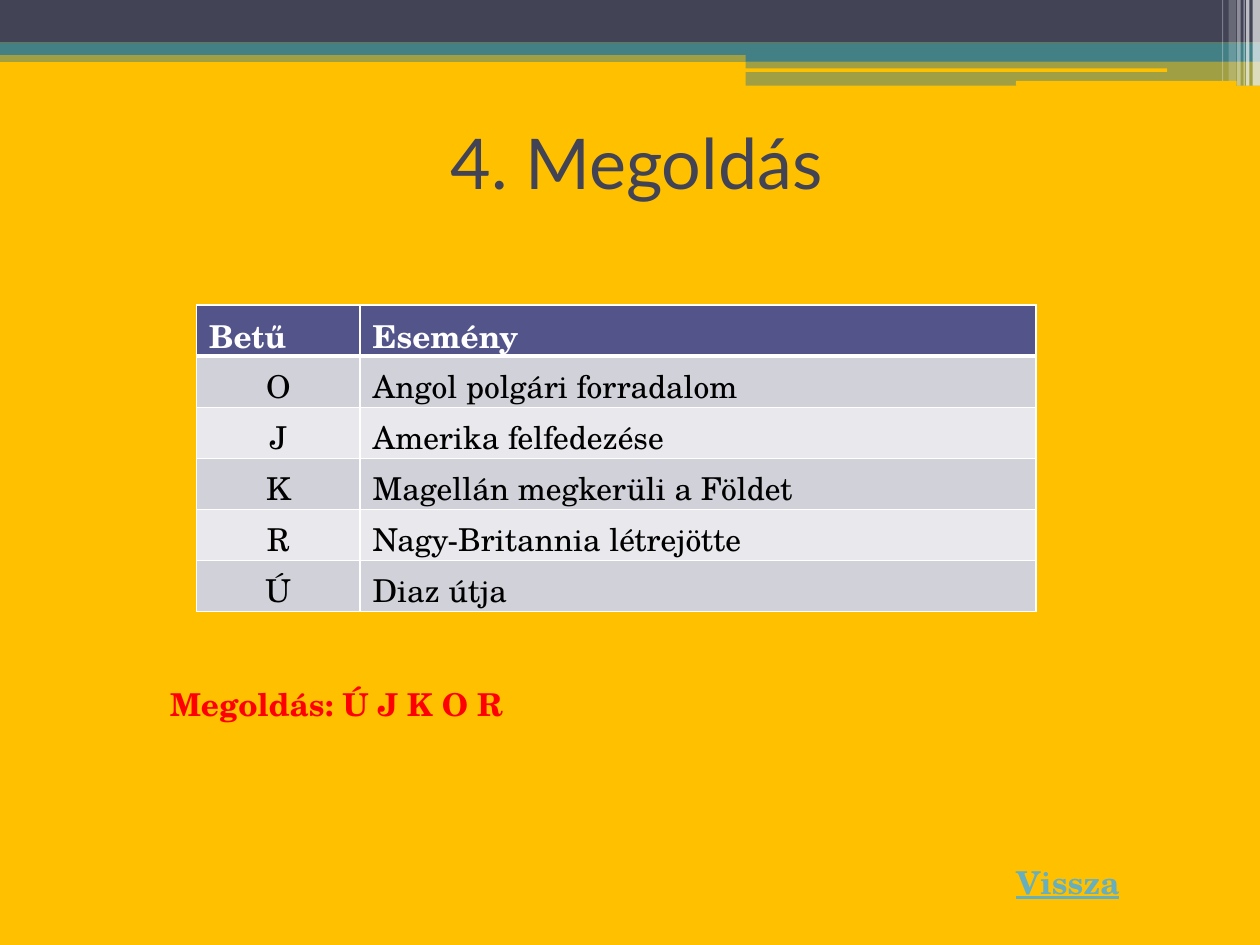
from lxml.etree import SubElement as Sub
from pptx import Presentation
from pptx.dml.color import RGBColor
from pptx.enum.shapes import MSO_SHAPE as Kind
from pptx.enum.text import MSO_ANCHOR as Anchor, PP_ALIGN as Align
from pptx.oxml.ns import qn
from pptx.util import Cm, Pt

GOLD = RGBColor(0xFF, 0xC0, 0x00)
SLATE = RGBColor(0x42, 0x44, 0x56)
TEAL = RGBColor(0x43, 0x80, 0x86)
WHITE = RGBColor(0xFF, 0xFF, 0xFF)
BLACK = RGBColor(0x00, 0x00, 0x00)
RED = RGBColor(0xFF, 0x00, 0x00)
AQUA = RGBColor(0x67, 0xAF, 0xBD)
INDIGO = RGBColor(0x53, 0x54, 0x8A)
GREY = RGBColor(0xD1, 0xD1, 0xDA)
PALE = RGBColor(0xE9, 0xE9, 0xED)


def write(frame, text, size=18, font="TeX Gyre Schola", color=BLACK,
          bold=False, line=False, align=Align.LEFT):
    par = frame.paragraphs[0]
    par.alignment = align
    run = par.add_run()
    run.text = text
    run.font.size = Pt(size)
    run.font.name = font
    run.font.color.rgb = color
    run.font.bold = bold
    run.font.underline = line


def edge(cell, side, width):
    line = Sub(cell._tc.get_or_add_tcPr(), qn("a:" + side), w=str(Pt(width)))
    fill = Sub(line, qn("a:solidFill"))
    Sub(fill, qn("a:srgbClr"), val=str(WHITE))


deck = Presentation()
deck.slide_width = Cm(25.4)
deck.slide_height = Cm(19.05)
slide = deck.slides.add_slide(deck.slide_layouts[6])
slide.background.fill.solid()
slide.background.fill.fore_color.rgb = GOLD

bars = [
    (0, 1.02, 25.4, 0.23, TEAL, 50),
    (0, 0, 25.4, 0.86, SLATE, 100),
    (0, 0.86, 25.4, 0.25, TEAL, 100),
    (15.03, 0.99, 10.37, 0.25, TEAL, 100),
    (15.03, 1.23, 10.37, 0.5, TEAL, 50),
    (15.02, 1.38, 8.51, 0.07, GOLD, 100),
    (20.48, 1.63, 4.45, 0.1, GOLD, 100),
    (25.25, 0, 0.15, 1.73, WHITE, 65),
    (25.12, 0, 0.07, 1.73, WHITE, 65),
    (25.07, 0, 0.02, 1.73, WHITE, 60),
    (24.94, 0, 0.07, 1.73, WHITE, 40),
    (24.77, 0, 0.15, 1.63, WHITE, 20),
    (24.64, 0, 0.02, 1.63, WHITE, 30),
]
for left, top, width, height, color, alpha in bars:
    kind = Kind.ROUNDED_RECTANGLE if color == GOLD else Kind.RECTANGLE
    bar = slide.shapes.add_shape(kind, Cm(left), Cm(top), Cm(width), Cm(height))
    bar.shadow.inherit = False
    bar.line.fill.background()
    bar.fill.solid()
    bar.fill.fore_color.rgb = color
    if alpha < 100:
        tint = bar.fill._xPr.find(".//" + qn("a:srgbClr"))
        Sub(tint, qn("a:alpha"), val=str(alpha * 1000))

title = slide.shapes.add_textbox(Cm(1.4), Cm(1.78), Cm(22.86), Cm(2.97)).text_frame
title.word_wrap = True
title.vertical_anchor = Anchor.MIDDLE
write(title, "4. Megoldás", size=40, font="Lato", color=SLATE, align=Align.CENTER)

back = slide.shapes.add_textbox(Cm(20.24), Cm(17.27), Cm(2.62), Cm(1.02)).text_frame
back.word_wrap = False
write(back, "Vissza", color=AQUA, bold=True, line=True)

rows = [
    ("Betű", "Esemény"),
    ("O", "Angol polgári forradalom"),
    ("J", "Amerika felfedezése"),
    ("K", "Magellán megkerüli a Földet"),
    ("R", "Nagy-Britannia létrejötte"),
    ("Ú", "Diaz útja"),
]
table = slide.shapes.add_table(len(rows), 2, Cm(3.96), Cm(6.15),
                               Cm(16.92), Cm(6.18)).table
table.columns[0].width = Cm(3.3)
table.columns[1].width = Cm(13.62)
for r, row in enumerate(rows):
    table.rows[r].height = Cm(1.03)
    head = r == 0
    for c, text in enumerate(row):
        cell = table.cell(r, c)
        cell.vertical_anchor = Anchor.BOTTOM
        cell.margin_bottom = 0
        for side in ("lnL", "lnR", "lnT", "lnB"):
            thick = (r, side) in ((0, "lnB"), (1, "lnT"))
            edge(cell, side, 3 if thick else 1)
        cell.fill.solid()
        cell.fill.fore_color.rgb = INDIGO if head else GREY if r % 2 else PALE
        write(cell.text_frame, text, color=WHITE if head else BLACK, bold=head,
              align=Align.LEFT if head or c else Align.CENTER)

answer = slide.shapes.add_textbox(Cm(3.18), Cm(13.69), Cm(17.86), Cm(1.02)).text_frame
answer.word_wrap = True
write(answer, "Megoldás: Ú J K O R", color=RED, bold=True)

deck.save("out.pptx")
